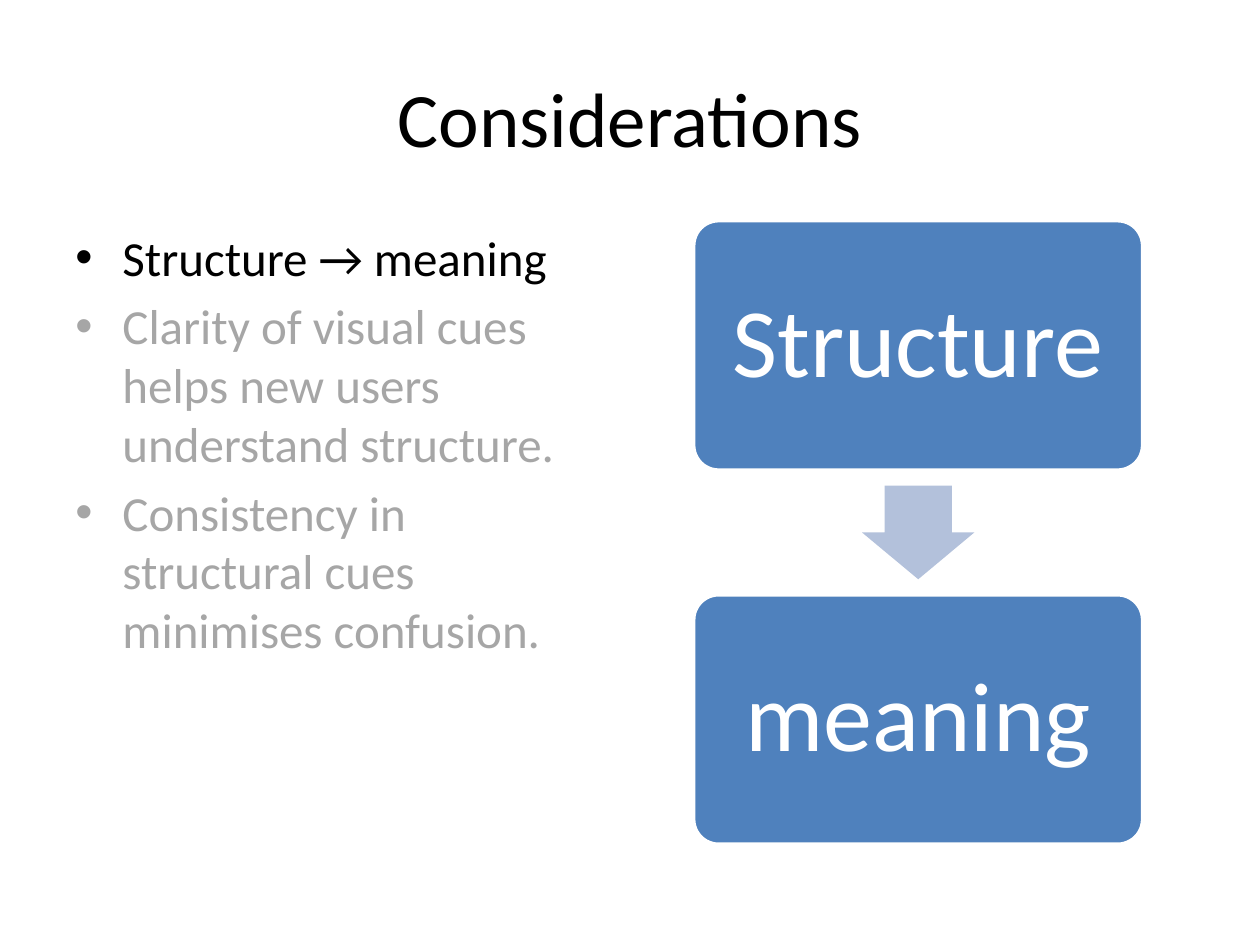
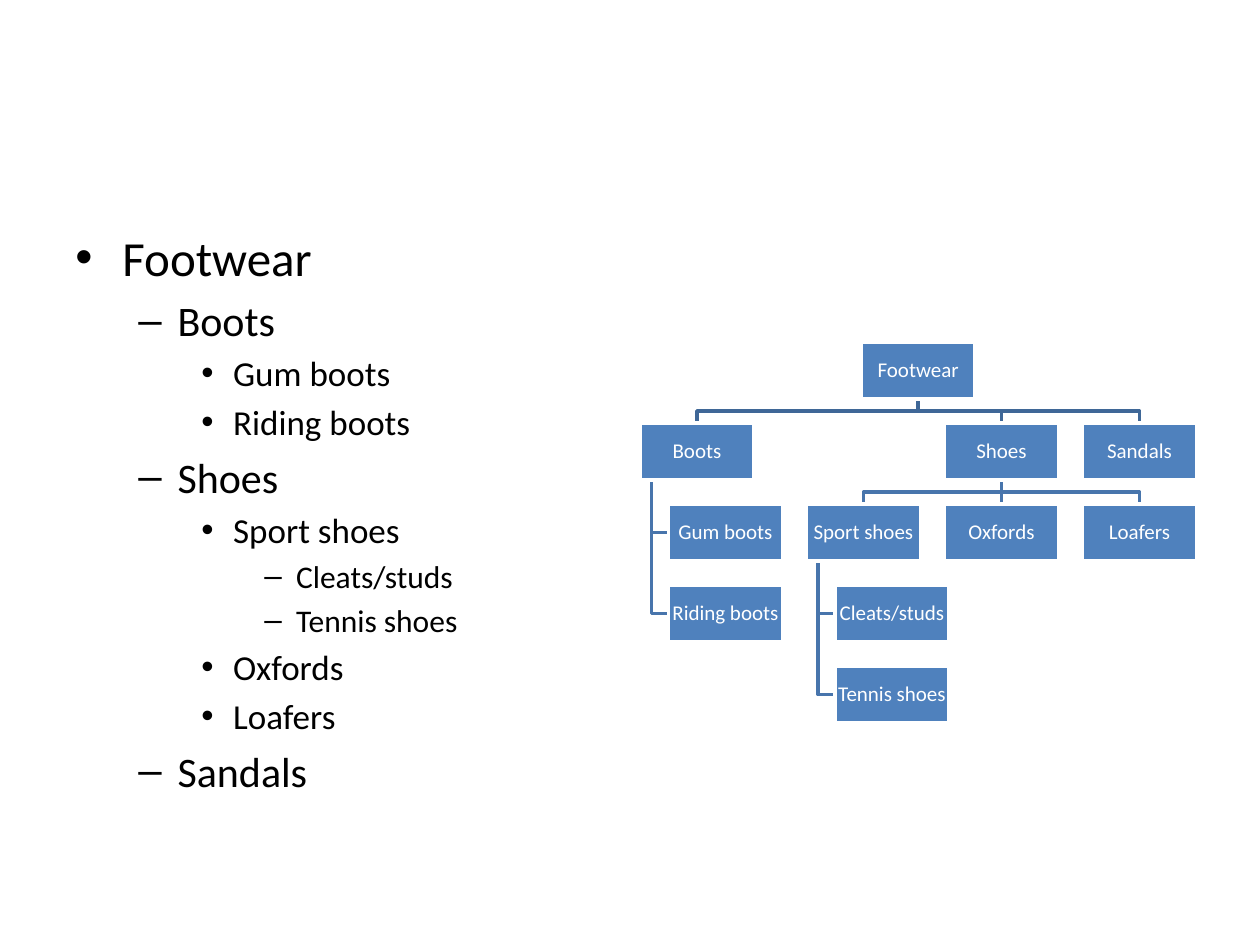
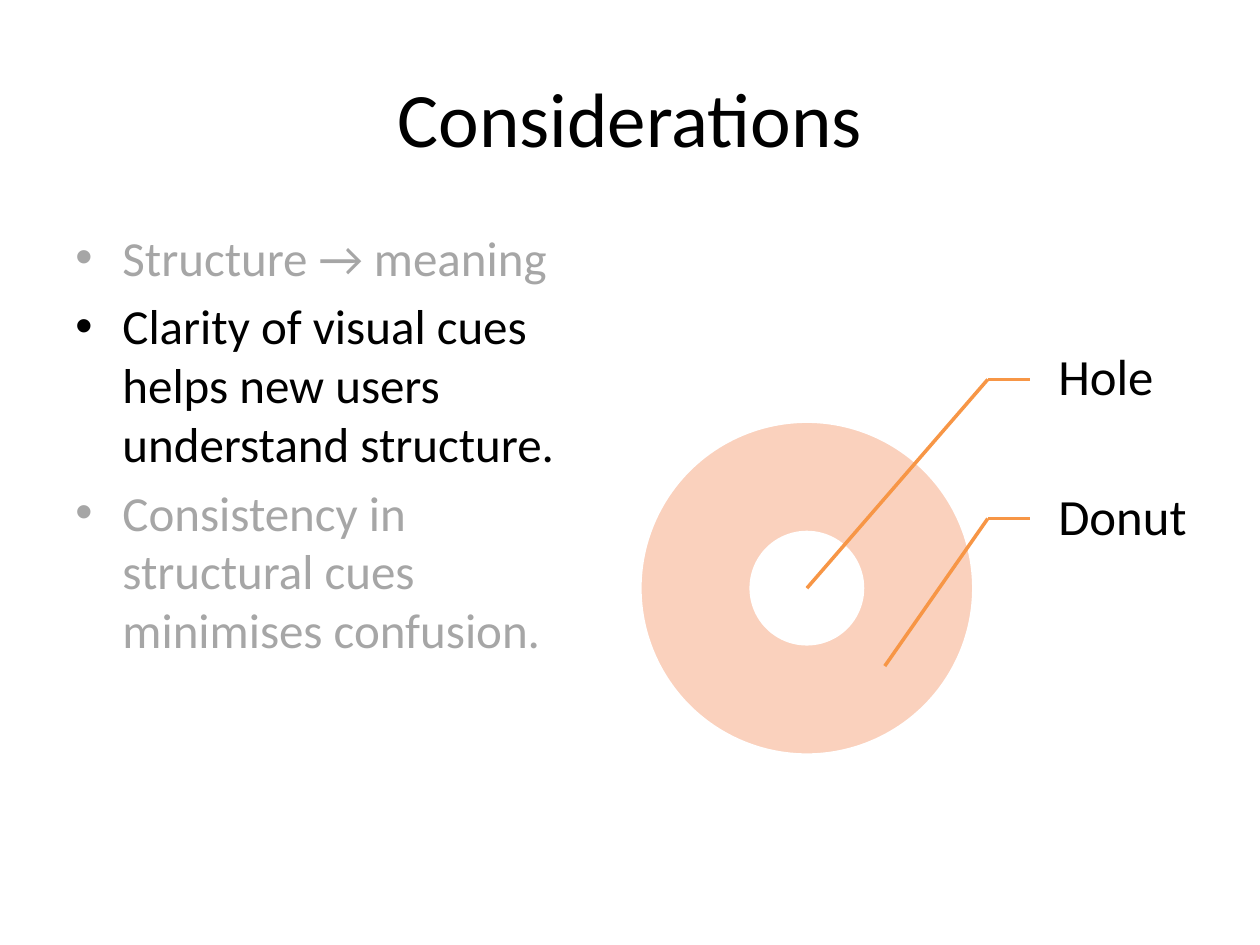
from collections import namedtuple

from lxml.etree import SubElement
from pptx import Presentation
from pptx.dml.color import RGBColor
from pptx.enum.shapes import MSO_CONNECTOR, MSO_SHAPE
from pptx.enum.text import MSO_ANCHOR, PP_ALIGN
from pptx.oxml.ns import qn
from pptx.util import Cm, Pt

BLACK = RGBColor(0x00, 0x00, 0x00)
WHITE = RGBColor(0xFF, 0xFF, 0xFF)
MUTED = RGBColor(0xA6, 0xA6, 0xA6)
BLUE = RGBColor(0x4F, 0x81, 0xBD)
PALE_BLUE = RGBColor(0xB3, 0xC1, 0xDB)
ROOT_BRANCH = RGBColor(0x3F, 0x67, 0x97)
BRANCH = RGBColor(0x48, 0x75, 0xAC)
DOUGH = RGBColor(0xFA, 0xD1, 0xBD)
ORANGE = RGBColor(0xF7, 0x96, 0x46)

# Regions, in centimetres
Box = namedtuple("Box", "left top width height")
TITLE = Box(1.27, 0.76, 22.86, 3.18)
BODY = Box(1.27, 4.45, 11.22, 12.57)
FIGURE = Box(12.9, 4.45, 11.22, 12.57)

# Outline levels: bullet, size, left margin and hanging indent in cm
Level = namedtuple("Level", "bullet size margin hanging")
LEVELS = [
    Level("•", 28, 0.95, 0.95),
    Level("–", 24, 2.06, 0.79),
    Level("•", 20, 3.18, 0.64),
    Level("–", 18, 4.45, 0.64),
]

CONSIDERATIONS = [
    "Structure → meaning",
    "Clarity of visual cues helps new users understand structure.",
    "Consistency in structural cues minimises confusion.",
]

# Footwear tree in outline order; columns count in node widths
COLUMN_STEP, ROW_STEP, HANG = 1.21, 0.71, 0.25
COLUMNS = [HANG + COLUMN_STEP * i for i in range(4)]
HANGING_PARENTS = ("Boots", "Sport shoes")
Node = namedtuple("Node", "name level column row parent")
FOOTWEAR = [
    Node("Footwear", 0, COLUMNS[3] / 2, 0, None),
    Node("Boots", 1, 0, 1, "Footwear"),
    Node("Gum boots", 2, HANG, 2, "Boots"),
    Node("Riding boots", 2, HANG, 3, "Boots"),
    Node("Shoes", 1, COLUMNS[2], 1, "Footwear"),
    Node("Sport shoes", 2, COLUMNS[1], 2, "Shoes"),
    Node("Cleats/studs", 3, COLUMNS[1] + HANG, 3, "Sport shoes"),
    Node("Tennis shoes", 3, COLUMNS[1] + HANG, 4, "Sport shoes"),
    Node("Oxfords", 2, COLUMNS[2], 2, "Shoes"),
    Node("Loafers", 2, COLUMNS[3], 2, "Shoes"),
    Node("Sandals", 1, COLUMNS[3], 1, "Footwear"),
]


def emu(*lengths):
    return [Cm(length) for length in lengths]


def write(shape, text, size=28, color=BLACK, align=PP_ALIGN.LEFT,
          anchor=MSO_ANCHOR.MIDDLE, insets=(0.25, 0.13, 0.25, 0.13),
          spacing=None, level=None):
    """Add one paragraph of formatted text to a shape."""
    frame = shape.text_frame
    frame.word_wrap = True
    frame.vertical_anchor = anchor
    (frame.margin_left, frame.margin_top,
     frame.margin_right, frame.margin_bottom) = emu(*insets)
    paragraph = frame.paragraphs[0]
    if paragraph.runs:
        paragraph = frame.add_paragraph()
    paragraph.alignment = align
    paragraph.line_spacing = spacing
    run = paragraph.add_run()
    run.text = text
    run.font.name = "Calibri"
    run.font.size = Pt(size)
    run.font.color.rgb = color
    if level is not None:
        style = LEVELS[level]
        run.font.size = Pt(style.size)
        paragraph.level = level
        paragraph.space_before = Pt(style.size * 0.2)
        properties = paragraph._p.get_or_add_pPr()
        properties.set("marL", str(Cm(style.margin)))
        properties.set("indent", str(-Cm(style.hanging)))
        SubElement(properties, qn("a:buFont")).set("typeface", "Arial")
        SubElement(properties, qn("a:buChar")).set("char", style.bullet)


def add_text_box(slide, box):
    return slide.shapes.add_textbox(*emu(*box))


def add_block(slide, preset, box, fill, outline=WHITE):
    block = slide.shapes.add_shape(preset, *emu(*box))
    block.shadow.inherit = False
    block.fill.solid()
    block.fill.fore_color.rgb = fill
    if outline is None:
        block.line.fill.background()
    else:
        block.line.color.rgb = outline
        block.line.width = Pt(2)
    return block


def add_line(slide, start, end, color):
    line = slide.shapes.add_connector(MSO_CONNECTOR.STRAIGHT, *emu(*start, *end))
    line.line.color.rgb = color
    line.line.width = Pt(2)
    SubElement(line._element.spPr, qn("a:effectLst"))
    return line


def add_bent_line(slide, points, color):
    start, *rest = [tuple(emu(*point)) for point in points]
    builder = slide.shapes.build_freeform(*start)
    builder.add_line_segments(rest, close=False)
    bent = builder.convert_to_shape()
    bent.shadow.inherit = False
    bent.fill.background()
    bent.line.color.rgb = color
    bent.line.width = Pt(2)


def add_title(slide, box, text):
    write(add_text_box(slide, box), text, size=44, align=PP_ALIGN.CENTER)


def add_outline(slide, box, items):
    """Bulleted list of (text, level, colour)."""
    body = add_text_box(slide, box)
    for text, level, color in items:
        write(body, text, color=color, level=level, anchor=MSO_ANCHOR.TOP)


def add_considerations(slide, active):
    """Title and list, with one point highlighted."""
    add_title(slide, TITLE, "Considerations")
    add_outline(slide, BODY, [
        (text, 0, BLACK if i == active else MUTED)
        for i, text in enumerate(CONSIDERATIONS)])


def add_process(slide, box):
    """Two stacked steps with an arrow between them."""
    height = box.height * 0.4
    width = height * 1.8
    center = box.left + box.width / 2
    for top, step in ((box.top, "Structure"),
                      (box.top + box.height - height, "meaning")):
        card = add_block(slide, MSO_SHAPE.ROUNDED_RECTANGLE,
                         Box(center - width / 2, top, width, height), BLUE)
        card.adjustments[0] = 0.1
        write(card, step, size=56, color=WHITE, align=PP_ALIGN.CENTER,
              insets=(0.58,) * 4, spacing=0.9)
    length, breadth = height * 0.375, height * 0.45
    middle = box.top + box.height / 2
    arrow = add_block(
        slide, MSO_SHAPE.RIGHT_ARROW,
        Box(center - length / 2, middle - breadth / 2, length, breadth),
        PALE_BLUE, outline=None)
    arrow.adjustments[0], arrow.adjustments[1] = 0.6, 0.5
    arrow.rotation = 90


def add_tree(slide, box):
    """Hierarchy of footwear, filling the width and centred vertically."""
    width = box.width / (COLUMNS[3] + 1)
    height = width / 2
    rows = max(node.row for node in FOOTWEAR)
    top = box.top + (box.height - rows * ROW_STEP * width - height) / 2
    places = {
        node.name: Box(box.left + node.column * width,
                       top + node.row * ROW_STEP * width, width, height)
        for node in FOOTWEAR}

    # Branches, behind the nodes
    straight = []
    for node in FOOTWEAR[1:]:
        parent, child = places[node.parent], places[node.name]
        color = ROOT_BRANCH if node.level == 1 else BRANCH
        bottom = parent.top + height
        start = (parent.left + width / 2, bottom)
        end = (child.left + width / 2, child.top)
        if node.parent in HANGING_PARENTS:
            trunk = parent.left + width * 0.1
            middle = child.top + height / 2
            add_bent_line(slide, [(trunk, bottom), (trunk, middle),
                                  (child.left, middle)], color)
        elif parent.left == child.left:
            straight.append((add_line(slide, start, end, color), node))
        else:
            bend = (bottom + child.top) / 2
            add_bent_line(slide, [start, (start[0], bend),
                                  (end[0], bend), end], color)

    # Nodes
    cards = {}
    for name, place in places.items():
        cards[name] = add_block(slide, MSO_SHAPE.RECTANGLE, place, BLUE)
        write(cards[name], name, size=12, color=WHITE, align=PP_ALIGN.CENTER,
              insets=(0.02,) * 4, spacing=0.9)
    for branch, node in straight:
        branch.begin_connect(cards[node.parent], 2)
        branch.end_connect(cards[node.name], 0)


def add_donut(slide, box):
    """Ring with two labelled callouts, scaled to the box width."""
    unit = box.width
    top = box.top + (box.height - unit * 0.8) / 2

    def at(x, y):
        return box.left + x * unit, top + y * unit

    # Ring and hole share a centre
    center = (0.3, 0.5)
    for diameter, fill in ((0.6, DOUGH), (0.2, WHITE)):
        corner = at(center[0] - diameter / 2, center[1] - diameter / 2)
        add_block(slide, MSO_SHAPE.OVAL,
                  Box(*corner, diameter * unit, diameter * unit), fill)

    # Callouts
    label_height = 0.25
    for i, (name, target) in enumerate((("Hole", center),
                                        ("Donut", (0.44, 0.64)))):
        label = add_text_box(slide, Box(*at(0.7, i * label_height),
                                        0.3 * unit, label_height * unit))
        write(label, name, size=29, insets=(0.58, 0.1, 0.1, 0.1), spacing=0.9)
        middle = (i + 0.5) * label_height
        elbow = at(0.625, middle)
        add_line(slide, elbow, at(0.7, middle), ORANGE).end_connect(label, 1)
        add_line(slide, elbow, at(*target), ORANGE)


def main():
    deck = Presentation()
    deck.slide_width, deck.slide_height = emu(25.4, 19.05)
    meaning, footwear, clarity = [
        deck.slides.add_slide(deck.slide_layouts[6]) for _ in range(3)]

    add_considerations(meaning, active=0)
    add_process(meaning, FIGURE)

    add_outline(footwear, BODY,
                [(node.name, node.level, BLACK) for node in FOOTWEAR])
    add_tree(footwear, FIGURE)

    add_considerations(clarity, active=1)
    add_donut(clarity, FIGURE)

    deck.save("out.pptx")


if __name__ == "__main__":
    main()
